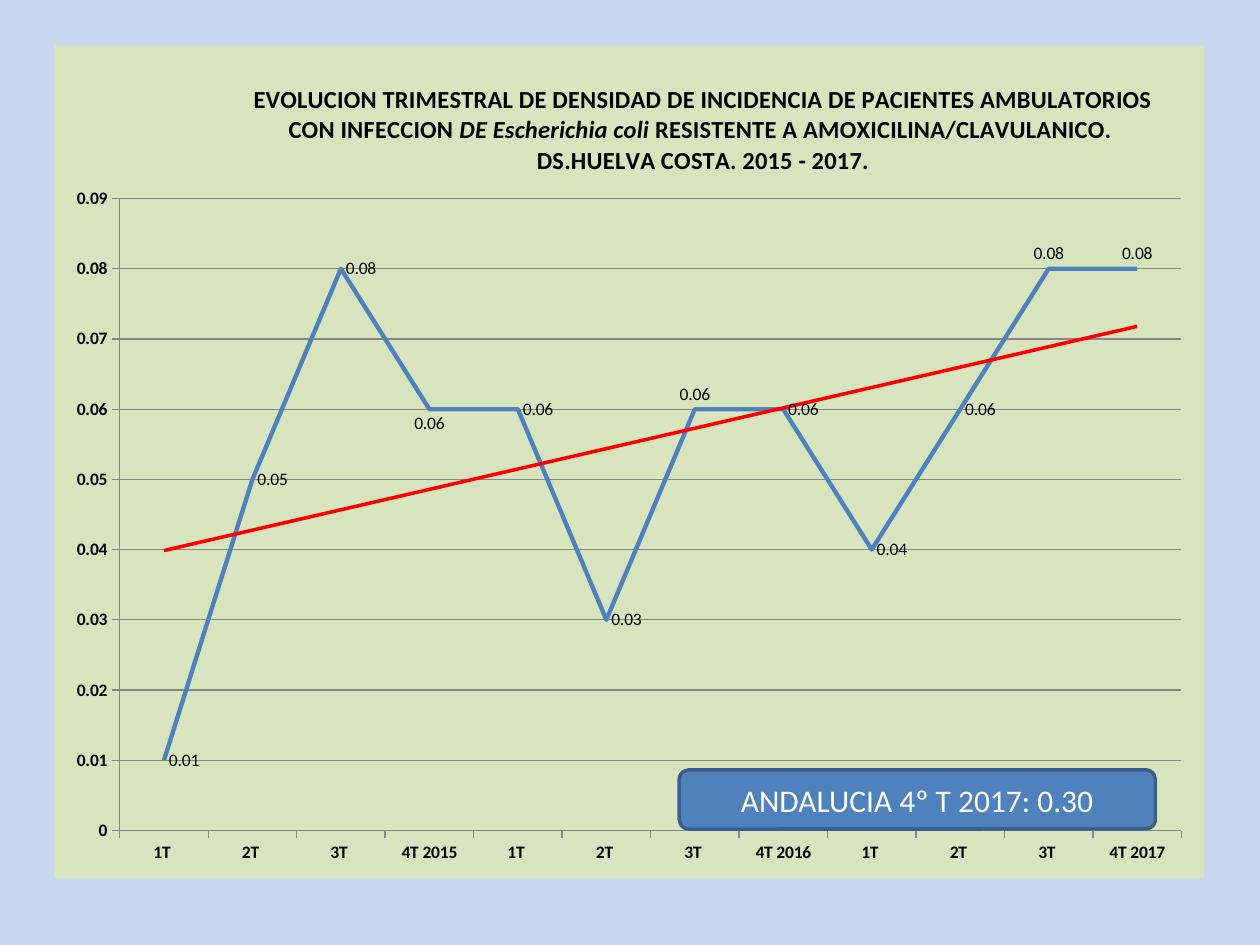
from lxml import etree
from pptx import Presentation
from pptx.chart.data import CategoryChartData
from pptx.dml.color import RGBColor
from pptx.enum.chart import XL_CHART_TYPE as ChartType, XL_LABEL_POSITION as LabelPosition
from pptx.enum.chart import XL_MARKER_STYLE as MarkerStyle, XL_TICK_MARK as TickMark
from pptx.enum.shapes import MSO_SHAPE as Shape
from pptx.enum.text import MSO_ANCHOR as Anchor, PP_ALIGN as Align
from pptx.oxml import parse_xml
from pptx.oxml.ns import nsdecls, qn
from pptx.util import Inches, Pt

COLORS = {
    "background": "C6D9F1", "chart": "D7E4BD", "series": "4F81BD", "trend": "FF0000",
    "grid": "868686", "outline": "3A5F8C", "text": "000000", "light": "FFFFFF",
}
FONT = "Calibri"
TITLE = [
    [("EVOLUCION TRIMESTRAL DE DENSIDAD DE INCIDENCIA DE PACIENTES AMBULATORIOS CON INFECCION ", False),
     ("DE Escherichia coli", True),
     (" RESISTENTE A AMOXICILINA/CLAVULANICO. ", False)],
    [("DS.HUELVA COSTA. 2015 - 2017.", False)],
]
YEARS = {
    2015: [0.01, 0.05, 0.08, 0.06],
    2016: [0.06, 0.03, 0.06, 0.06],
    2017: [0.04, 0.06, 0.08, 0.08],
}
LABEL_POSITIONS = {
    3: LabelPosition.BELOW, 6: LabelPosition.ABOVE,
    10: LabelPosition.ABOVE, 11: LabelPosition.ABOVE,
}
CALLOUT = "ANDALUCIA 4º T 2017: 0.30"


def color(name):
    return RGBColor.from_string(COLORS[name])


def style_line(line, name, width):
    line.color.rgb = color(name)
    line.width = Pt(width)


def add_text(paragraph, text, size=18, bold=False, italic=False, fill="text"):
    paragraph.alignment = Align.CENTER
    run = paragraph.add_run()
    run.text = text
    run.font.name = FONT
    run.font.size = Pt(size)
    run.font.bold = bold
    run.font.italic = italic
    run.font.color.rgb = color(fill)


def set_layout(element, position, **values):
    layout = element.find(qn("c:layout"))
    if layout is None:
        layout = etree.SubElement(element, qn("c:layout"))
        element.insert(position, layout)
    for child in list(layout):
        layout.remove(child)
    manual = etree.SubElement(layout, qn("c:manualLayout"))
    for tag, value in values.items():
        etree.SubElement(manual, qn(f"c:{tag}")).set("val", str(value))


def add_title(chart):
    title = chart.chart_title
    frame = title.text_frame
    for index, runs in enumerate(TITLE):
        paragraph = frame.add_paragraph() if index else frame.paragraphs[0]
        for text, italic in runs:
            add_text(paragraph, text, size=14, bold=True, italic=italic)
    title.include_in_layout = False
    set_layout(title._element, 1, xMode="edge", yMode="edge", x=0.17, y=0.04)


def add_trend(series):
    trend = parse_xml(
        f'<c:trendline {nsdecls("c", "a")}><c:spPr><a:ln w="{Pt(2)}"><a:solidFill>'
        f'<a:srgbClr val="{COLORS["trend"]}"/></a:solidFill></a:ln></c:spPr>'
        '<c:trendlineType val="linear"/><c:dispRSqr val="0"/><c:dispEq val="0"/></c:trendline>')
    series._element.find(qn("c:cat")).addprevious(trend)


def add_chart(slide):
    data = CategoryChartData()
    data.categories = [
        f"{quarter}T {year if quarter == 4 else ''}" for year in YEARS for quarter in range(1, 5)]
    data.add_series("Series 1", [value for values in YEARS.values() for value in values])
    chart = slide.shapes.add_chart(
        ChartType.LINE, Inches(0.43), Inches(0.36), Inches(9.13), Inches(6.61), data).chart
    chart.has_legend = False
    chart.font.name = FONT
    chart.font.size = Pt(10)
    chart.font.color.rgb = color("text")
    add_title(chart)

    chart_element = chart._chartSpace.find(qn("c:chart"))
    chart_element.addnext(parse_xml(
        f'<c:spPr {nsdecls("c", "a")}><a:solidFill><a:srgbClr val="{COLORS["chart"]}"/></a:solidFill>'
        '<a:ln><a:noFill/></a:ln></c:spPr>'))
    set_layout(chart_element.find(qn("c:plotArea")), 0, layoutTarget="inner",
               xMode="edge", yMode="edge", x=0.057, y=0.184, w=0.923, h=0.759)

    for axis in (chart.category_axis, chart.value_axis):
        axis.tick_labels.font.bold = True
        axis.tick_labels.font.size = Pt(10)
        axis.major_tick_mark = TickMark.OUTSIDE
        style_line(axis.format.line, "grid", 0.75)
    chart.value_axis.minimum_scale = 0
    chart.value_axis.maximum_scale = 0.09
    chart.value_axis.major_unit = 0.01
    style_line(chart.value_axis.major_gridlines.format.line, "grid", 0.75)

    plot = chart.plots[0]
    plot.vary_by_categories = False
    series = plot.series[0]
    series.smooth = False
    series.marker.style = MarkerStyle.NONE
    style_line(series.format.line, "series", 2.5)
    series.data_labels.show_value = True
    series.data_labels.position = LabelPosition.RIGHT
    for index, position in LABEL_POSITIONS.items():
        series.points[index].data_label.position = position
    add_trend(series)


def add_callout(slide):
    shape = slide.shapes.add_shape(
        Shape.ROUNDED_RECTANGLE, Inches(5.39), Inches(6.11), Inches(3.78), Inches(0.47))
    shape.shadow.inherit = False
    shape.fill.solid()
    shape.fill.fore_color.rgb = color("series")
    style_line(shape.line, "outline", 2)
    shape.text_frame.vertical_anchor = Anchor.MIDDLE
    add_text(shape.text_frame.paragraphs[0], CALLOUT, fill="light")


def main():
    presentation = Presentation()
    presentation.slide_width = Inches(10)
    presentation.slide_height = Inches(7.5)
    slide = presentation.slides.add_slide(presentation.slide_layouts[6])
    slide.background.fill.solid()
    slide.background.fill.fore_color.rgb = color("background")
    add_chart(slide)
    add_callout(slide)
    presentation.save("out.pptx")


if __name__ == "__main__":
    main()
